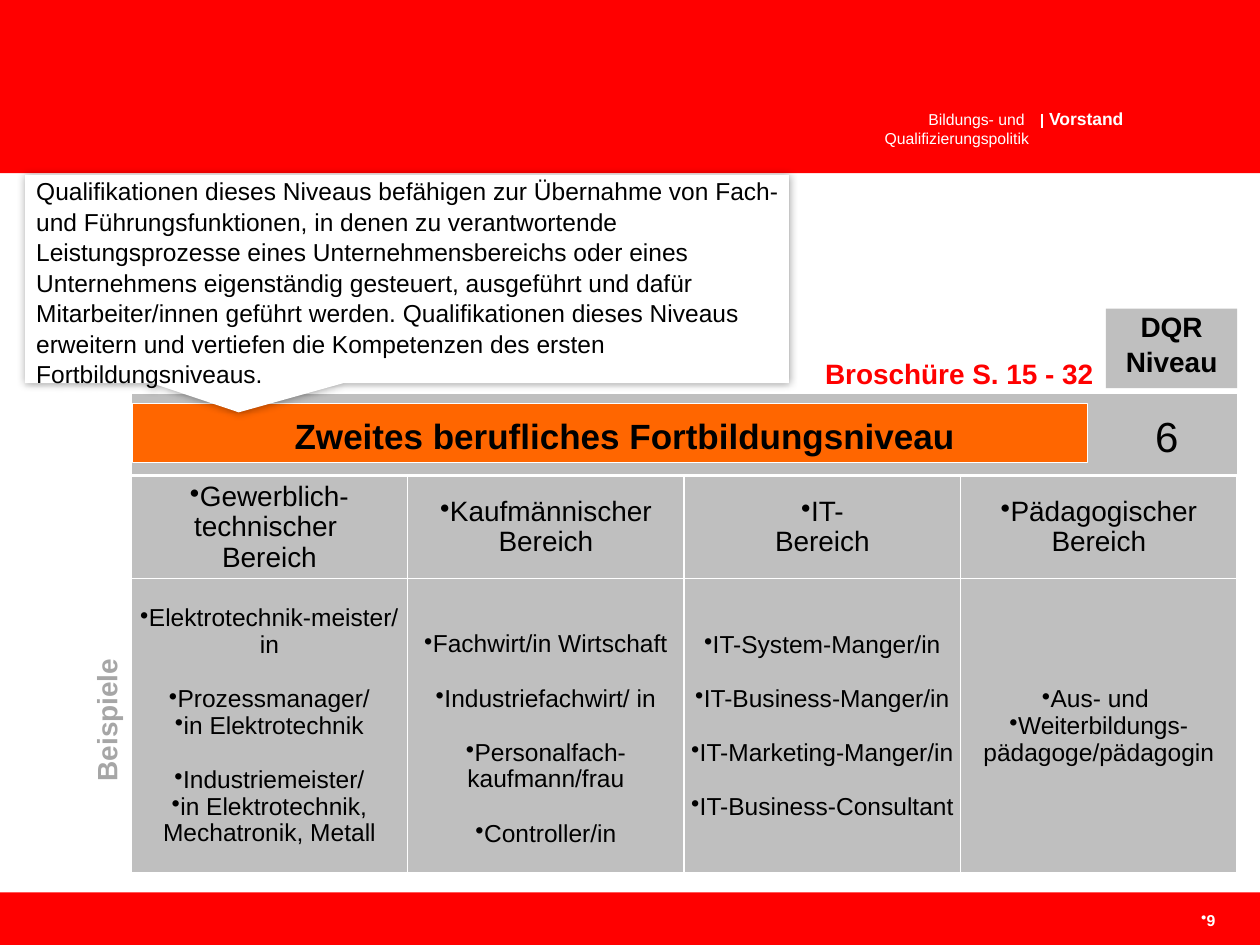
import copy
import pptx
import pptx.util
import pptx.dml.color
import pptx.enum.shapes
import pptx.enum.text
import pptx.oxml
import pptx.oxml.ns

Pt = pptx.util.Pt
SHAPES = pptx.enum.shapes.MSO_SHAPE
ALIGN = pptx.enum.text.PP_ALIGN
ANCHOR = pptx.enum.text.MSO_ANCHOR

COLORS = {"red": "FF0000", "white": "FFFFFF", "black": "000000",
          "gray": "BFBFBF", "label": "A6A6A6", "orange": "FF6600"}
FONT = "Arial"
CALLOUT_TEXT = (
    "Qualifikationen dieses Niveaus befähigen zur Übernahme von Fach- und "
    "Führungsfunktionen, in denen zu verantwortende Leistungsprozesse eines "
    "Unternehmensbereichs oder eines Unternehmens eigenständig gesteuert, "
    "ausgeführt und dafür Mitarbeiter/innen geführt werden. Qualifikationen "
    "dieses Niveaus erweitern und vertiefen die Kompetenzen des ersten "
    "Fortbildungsniveaus.")
AREAS = [
    ("Gewerblich-\ntechnischer \nBereich",
     [["Elektrotechnik-meister/in"],
      ["Prozessmanager/", "in Elektrotechnik"],
      ["Industriemeister/", "in Elektrotechnik, Mechatronik, Metall"]]),
    ("Kaufmännischer\nBereich",
     [["Fachwirt/in Wirtschaft"], ["Industriefachwirt/ in"],
      ["Personalfach-kaufmann/frau"], ["Controller/in"]]),
    ("IT-\nBereich",
     [["IT-System-Manger/in"], ["IT-Business-Manger/in"],
      ["IT-Marketing-Manger/in"], ["IT-Business-Consultant"]]),
    ("Pädagogischer\nBereich",
     [["Aus- und ", "Weiterbildungs-pädagoge/pädagogin"]]),
]
TABLE_LEFT, TABLE_TOP, COLUMN_WIDTH = 75, 272, 158
ROW_HEIGHTS = (58.5, 168.5)
EXAMPLE_GAP = 15.7
BUSINESS_COLUMN = 1


def rgb(name):
    return pptx.dml.color.RGBColor.from_string(COLORS[name])


def element(xml):
    namespace = pptx.oxml.ns.nsdecls("a")
    return pptx.oxml.parse_xml(xml.replace(" ", f" {namespace} ", 1))


def write(paragraph, text, size=14, color="black", bold=False, align=ALIGN.LEFT,
          spacing=None, before=0, bullet=False, indent=0):
    properties = paragraph._p.get_or_add_pPr()
    if indent:
        properties.set("marL", str(Pt(indent)))
    if bullet:
        properties.set("marL", "0")
        properties.set("indent", "0")
        properties.append(element('<a:buChar char="•"/>'))
    paragraph.alignment = align
    paragraph.line_spacing = spacing
    if before:
        paragraph.space_before = Pt(before)
    for index, line in enumerate(text.split("\n")):
        if index:
            paragraph.add_line_break()
        run = paragraph.add_run()
        run.text = line
        run.font.name, run.font.size, run.font.bold = FONT, Pt(size), bold
        run.font.color.rgb = rgb(color)
    for line_break in paragraph._p.findall(pptx.oxml.ns.qn("a:br")):
        line_break.append(copy.deepcopy(run._r.rPr))


def set_margins(target, left, top, right, bottom):
    target.margin_left, target.margin_top = Pt(left), Pt(top)
    target.margin_right, target.margin_bottom = Pt(right), Pt(bottom)


def add_text(slide, box, text, inset=True, wrap=True, **style):
    shape = slide.shapes.add_textbox(*map(Pt, box))
    frame = shape.text_frame
    frame.word_wrap = wrap
    if not inset:
        set_margins(frame, 0, 0, 0, 0)
    write(frame.paragraphs[0], text, **style)
    return shape


def add_block(slide, box, fill, outlined=False, kind=SHAPES.RECTANGLE, text=None, **style):
    shape = slide.shapes.add_shape(kind, *map(Pt, box))
    shape.shadow.inherit = False
    shape.fill.solid()
    shape.fill.fore_color.rgb = rgb(fill)
    if outlined:
        shape.line.color.rgb = rgb("white")
        shape.line.width = Pt(0.75)
    else:
        shape.line.fill.background()
    if text:
        frame = shape.text_frame
        frame.word_wrap = True
        frame.vertical_anchor = ANCHOR.TOP
        set_margins(frame, 0, 0, 0, 0)
        write(frame.paragraphs[0], text, **style)
    return shape


def format_cell(cell):
    set_margins(cell, 0.7, 0.7, 0.7, 0)
    cell.vertical_anchor = ANCHOR.MIDDLE
    properties = cell._tc.get_or_add_tcPr()
    for side in ("lnL", "lnR", "lnT", "lnB"):
        properties.append(element(
            f'<a:{side} w="{Pt(1)}"><a:solidFill><a:srgbClr val="{COLORS["white"]}"/>'
            f'</a:solidFill></a:{side}>'))
    cell.fill.solid()
    cell.fill.fore_color.rgb = rgb("gray")


def add_area_table(slide):
    table = slide.shapes.add_table(
        len(ROW_HEIGHTS), len(AREAS), Pt(TABLE_LEFT), Pt(TABLE_TOP),
        Pt(COLUMN_WIDTH * len(AREAS)), Pt(sum(ROW_HEIGHTS))).table
    table.first_row = table.horz_banding = False
    for row, height in zip(table.rows, ROW_HEIGHTS):
        row.height = Pt(height)
    style = {"align": ALIGN.CENTER, "spacing": 0.97, "bullet": True}
    for column, (area, groups) in enumerate(AREAS):
        table.columns[column].width = Pt(COLUMN_WIDTH)
        heading, examples = table.cell(0, column), table.cell(1, column)
        format_cell(heading)
        format_cell(examples)
        write(heading.text_frame.paragraphs[0], area, size=16, **style)
        frame = examples.text_frame
        for group_index, group in enumerate(groups):
            for line_index, line in enumerate(group):
                first = group_index == line_index == 0
                paragraph = frame.paragraphs[0] if first else frame.add_paragraph()
                gap = EXAMPLE_GAP if group_index and not line_index else 0
                write(paragraph, line, before=gap, **style)
    table.cell(1, BUSINESS_COLUMN).margin_top = Pt(EXAMPLE_GAP)


def add_header_and_footer(slide):
    add_block(slide, (0, 510, 720, 30), "red")
    add_block(slide, (0, 0, 720, 99), "red")
    add_text(slide, (599.5, 63, 44, 11), "Vorstand", inset=False, wrap=False,
             size=10, color="white", bold=True, spacing=Pt(11))
    divider = slide.shapes.add_connector(
        pptx.enum.shapes.MSO_CONNECTOR.STRAIGHT, Pt(595.4), Pt(65), Pt(595.4), Pt(73))
    divider.line.color.rgb = rgb("white")
    divider.line.width = Pt(0.8)
    divider._element.spPr.append(element("<a:effectLst />"))
    add_text(slide, (490, 62.6, 98, 22), "Bildungs- und \nQualifizierungspolitik",
             inset=False, size=9, color="white", align=ALIGN.RIGHT, spacing=Pt(11))
    add_text(slide, (676, 519, 18.5, 12), "9", inset=False, size=9, color="white",
             bold=True, align=ALIGN.RIGHT, spacing=Pt(12), bullet=True)


def add_callout(slide):
    callout = add_block(slide, (14.2, 100, 436.6, 119), "white",
                        kind=SHAPES.RECTANGULAR_CALLOUT, text=CALLOUT_TEXT,
                        spacing=1.04, indent=6.5)
    callout.adjustments[0], callout.adjustments[1] = -0.22, 0.64
    effects = callout._element.spPr.find(pptx.oxml.ns.qn("a:effectLst"))
    effects.append(element(
        f'<a:outerShdw blurRad="{Pt(5)}" dist="0" dir="0"><a:srgbClr val="{COLORS["black"]}">'
        '<a:alpha val="40000"/></a:srgbClr></a:outerShdw>'))


def main():
    presentation = pptx.Presentation()
    presentation.slide_width, presentation.slide_height = Pt(720), Pt(540)
    slide = presentation.slides.add_slide(presentation.slide_layouts[6])
    add_header_and_footer(slide)
    add_text(slide, (391, 200, 241, 27), "Broschüre S. 15 - 32", size=16,
             color="red", bold=True, align=ALIGN.RIGHT)
    add_block(slide, (TABLE_LEFT, 225, 632, 46), "gray", outlined=True)
    add_text(slide, (653, 231, 45, 36), "6", size=24)
    add_area_table(slide)
    add_block(slide, (632, 176.4, 75, 45.4), "gray", text="DQR\nNiveau", size=16,
              bold=True, align=ALIGN.CENTER, spacing=1.04)
    label = add_text(slide, (-24, 398, 170, 27), "Beispiele", size=16, color="label",
                     bold=True, align=ALIGN.CENTER)
    label.rotation = 270
    add_block(slide, (75.6, 230.4, 546, 34), "orange", outlined=True)
    add_text(slide, (161.3, 233.3, 493, 32), "Zweites berufliches Fortbildungsniveau",
             size=20, bold=True)
    add_callout(slide)
    presentation.save("out.pptx")


if __name__ == "__main__":
    main()
